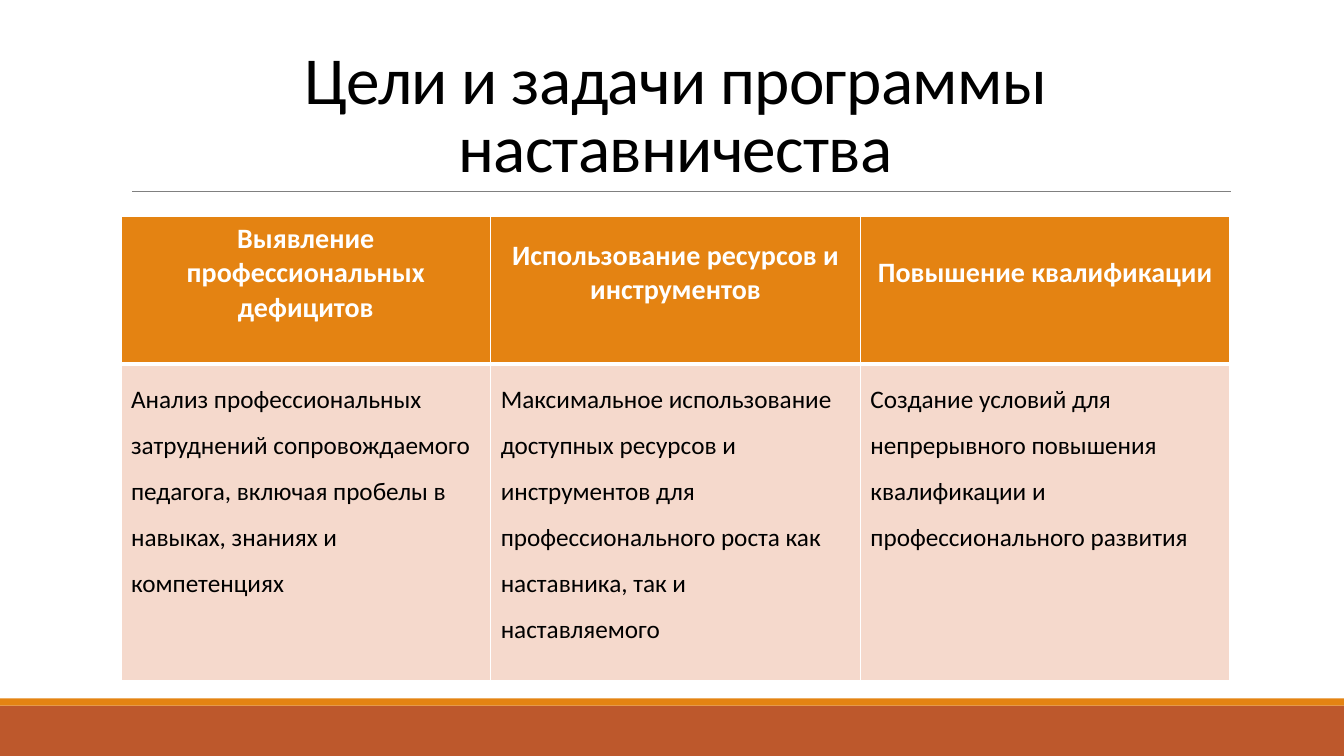
from dataclasses import dataclass

from lxml.etree import SubElement as Sub
from pptx import Presentation
from pptx.dml.color import RGBColor as RGB
from pptx.enum.shapes import MSO_CONNECTOR as Link, MSO_SHAPE as Kind
from pptx.enum.text import MSO_ANCHOR as Anchor, MSO_AUTO_SIZE as Fit, PP_ALIGN as Align
from pptx.oxml.ns import qn
from pptx.util import Inches, Pt


@dataclass
class Theme:
    font: str = "Calibri"
    rust: str = "BD582C"
    gold: str = "E48312"
    pale: str = "F5D9CC"
    gray: str = "808080"
    ink: str = "000000"
    white: str = "FFFFFF"
    title: int = 48
    head: int = 20
    body: int = 18


def style(para, size, color, bold=False):
    font = para.font
    font.name, font.size, font.bold = theme.font, Pt(size), bold
    font.color.rgb = RGB.from_string(color)


def edge(cell, side, width):
    line = Sub(cell._tc.get_or_add_tcPr(), qn(f"a:ln{side}"), w=str(Pt(width)))
    Sub(Sub(line, qn("a:solidFill")), qn("a:srgbClr"), val=theme.white)


theme = Theme()
wide, high = 13.33, 7.5
left, span = 1.2, 11

deck = Presentation()
deck.slide_width, deck.slide_height = Inches(wide), Inches(high)
slide = deck.slides.add_slide(deck.slide_layouts[5])
shapes = slide.shapes

for top, tall, color in ((7, 0.5, theme.rust), (6.93, 0.07, theme.gold)):
    bar = shapes.add_shape(Kind.RECTANGLE, 0, Inches(top), Inches(wide), Inches(tall))
    bar.shadow.inherit = False
    bar.fill.solid()
    bar.fill.fore_color.rgb = RGB.from_string(color)
    bar.line.fill.background()

rule = shapes.add_connector(Link.STRAIGHT, Inches(1.31), Inches(1.9), Inches(12.21), Inches(1.9))
rule.line.color.rgb = RGB.from_string(theme.gray)
rule.line.width = Pt(0.5)
Sub(rule._element.spPr, qn("a:effectLst"))

title = shapes.title
title.left, title.top = Inches(left), Inches(0.31)
title.width, title.height = Inches(span), Inches(1.59)
frame = title.text_frame
frame.text = "Цели и задачи программы наставничества"
frame.word_wrap, frame.auto_size = True, Fit.NONE
frame.vertical_anchor = Anchor.BOTTOM
para = frame.paragraphs[0]
para.alignment, para.line_spacing = Align.CENTER, 0.85
style(para, theme.title, theme.ink)
para.runs[0].font._element.set("spc", "-50")

goals = (
    ("Выявление профессиональных дефицитов",
     "Анализ профессиональных затруднений сопровождаемого педагога, "
     "включая пробелы в навыках, знаниях и компетенциях"),
    ("Использование ресурсов и инструментов",
     "Максимальное использование доступных ресурсов и инструментов для "
     "профессионального роста как наставника, так и наставляемого"),
    ("Повышение квалификации",
     "Создание условий для непрерывного повышения квалификации "
     "и профессионального развития"),
)
rows = (1.46, 3.14)
table = shapes.add_table(len(rows), len(goals), Inches(left), Inches(2.15),
                         Inches(span), Inches(sum(rows))).table
for row, tall in zip(table.rows, rows):
    row.height = Inches(tall)

for col, texts in enumerate(goals):
    for row, text in enumerate(texts):
        head = row == 0
        cell = table.cell(row, col)
        for side, width in zip("LRTB", (1, 1, 1, 3) if head else (1, 1, 3, 1)):
            edge(cell, side, width)
        cell.fill.solid()
        cell.fill.fore_color.rgb = RGB.from_string(theme.gold if head else theme.pale)
        cell.text = text
        para = cell.text_frame.paragraphs[0]
        if head:
            cell.vertical_anchor = Anchor.MIDDLE
            cell.margin_bottom = Inches(0.39)
            para.alignment = Align.CENTER
            style(para, theme.head, theme.white, True)
        else:
            para.line_spacing = 1.5
            style(para, theme.body, theme.ink)

deck.save("out.pptx")
